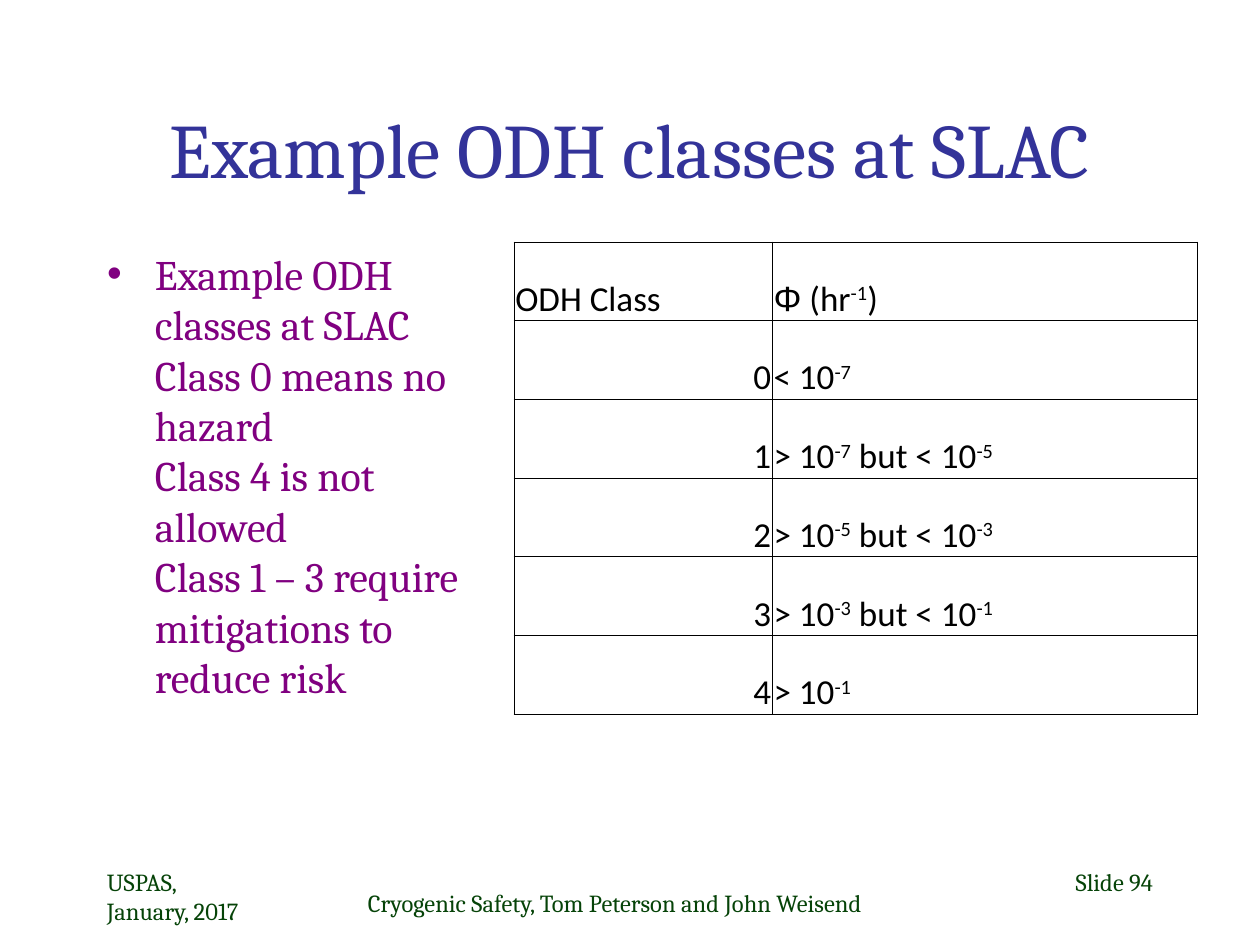
from dataclasses import dataclass

from lxml.etree import SubElement
from pptx import Presentation
from pptx.dml.color import RGBColor
from pptx.enum.text import MSO_ANCHOR, MSO_AUTO_SIZE, PP_ALIGN
from pptx.oxml.ns import qn
from pptx.util import Inches, Pt


def color(value):
    return RGBColor.from_string(value)


@dataclass
class Run:
    text: str
    font: str = "Calibri"
    raised: bool = False


def power(sign, exponent):
    return [Run(f"{sign} 10"), Run(exponent, raised=True)]


def between(low, high):
    return power(">", low) + power(" but <", high)


class SlideBuilder:
    font = "Cambria"
    title_color = "333399"
    body_color = "800080"
    footer_color = "064308"
    table_color = "000000"

    def __init__(self, slide):
        self.slide = slide

    def place(self, shape, left, top, width, height):
        shape.left, shape.top = Inches(left), Inches(top)
        shape.width, shape.height = Inches(width), Inches(height)

    def style(self, paragraph, size, value, alignment=PP_ALIGN.LEFT, name=font):
        paragraph.alignment = alignment
        paragraph.font.size = Pt(size)
        paragraph.font.color.rgb = color(value)
        if name:
            paragraph.font.name = name

    def title(self, text, *bounds):
        shape = self.slide.shapes.title
        self.place(shape, *bounds)
        frame = shape.text_frame
        frame.text = text
        frame.auto_size = MSO_AUTO_SIZE.NONE
        frame.vertical_anchor = MSO_ANCHOR.MIDDLE
        self.style(frame.paragraphs[0], 44, self.title_color, PP_ALIGN.CENTER)

    def body(self, lines, *bounds):
        shape = self.slide.placeholders[1]
        self.place(shape, *bounds)
        frame = shape.text_frame
        frame.auto_size = MSO_AUTO_SIZE.NONE
        paragraph = frame.paragraphs[0]
        paragraph.text = "\v".join(lines)
        paragraph.space_before = Pt(0)
        properties = paragraph._p.get_or_add_pPr()
        properties.set("marL", str(Inches(0.38)))
        properties.set("indent", str(Inches(-0.38)))
        SubElement(properties, qn("a:buFont")).set("typeface", "Arial")
        SubElement(properties, qn("a:buChar")).set("char", "•")
        self.style(paragraph, 24, self.body_color)

    def footer(self, text, alignment, left, top, width, height):
        shape = self.slide.shapes.add_textbox(
            Inches(left), Inches(top), Inches(width), Inches(height))
        frame = shape.text_frame
        frame.word_wrap = True
        paragraph = frame.paragraphs[0]
        paragraph.text = text
        self.style(paragraph, 14, self.footer_color, alignment)

    def border(self, cell):
        properties = cell._tc.get_or_add_tcPr()
        for side in ("a:lnL", "a:lnR", "a:lnT", "a:lnB"):
            line = SubElement(properties, qn(side), w=str(Pt(0.5)))
            fill = SubElement(line, qn("a:solidFill"))
            SubElement(fill, qn("a:srgbClr"), val=self.table_color)

    def cell(self, cell, runs, alignment):
        cell.margin_left = cell.margin_right = cell.margin_top = Inches(0.01)
        cell.margin_bottom = 0
        cell.vertical_anchor = MSO_ANCHOR.BOTTOM
        self.border(cell)
        cell.fill.background()
        paragraph = cell.text_frame.paragraphs[0]
        self.style(paragraph, 20, self.table_color, alignment, None)
        for item in runs:
            run = paragraph.add_run()
            run.text = item.text
            run.font.name = item.font
            if item.raised:
                run._r.get_or_add_rPr().set("baseline", "30000")

    def table(self, rows, widths, left, top, height):
        frame = self.slide.shapes.add_table(
            len(rows), len(widths), Inches(left), Inches(top),
            Inches(sum(widths)), Inches(height))
        table = frame.table
        table.first_row = table.horz_banding = False
        for column, width in zip(table.columns, widths):
            column.width = Inches(width)
        for row_index, row in enumerate(rows):
            for column_index, runs in enumerate(row):
                numeric = row_index > 0 and column_index == 0
                alignment = PP_ALIGN.RIGHT if numeric else PP_ALIGN.LEFT
                self.cell(table.cell(row_index, column_index), runs, alignment)


def main():
    presentation = Presentation()
    presentation.slide_width, presentation.slide_height = Inches(10), Inches(7.5)
    builder = SlideBuilder(
        presentation.slides.add_slide(presentation.slide_layouts[1]))

    builder.title("Example ODH classes at SLAC", 0.75, 0.67, 8.5, 1)
    builder.body([
        "Example ODH classes at SLAC",
        "Class 0 means no hazard",
        "Class 4 is not allowed",
        "Class 1 – 3 require mitigations to reduce risk",
    ], 0.75, 1.92, 3.25, 4.75)

    builder.footer("USPAS,\vJanuary, 2017", PP_ALIGN.LEFT, 0.75, 6.83, 1.75, 0.5)
    builder.footer("Cryogenic Safety, Tom Peterson and John Weisend",
                   PP_ALIGN.CENTER, 2.67, 7, 4.42, 0.33)
    builder.footer("Slide 94", PP_ALIGN.RIGHT, 7.17, 6.83, 2.08, 0.5)

    header = [
        [Run("ODH Class")],
        [Run("Φ", "Arial"), Run(" (hr"), Run("-1", raised=True), Run(")")],
    ]
    rates = [
        power("<", "-7"),
        between("-7", "-5"),
        between("-5", "-3"),
        between("-3", "-1"),
        power(">", "-1"),
    ]
    classes = [[[Run(str(number))], rate] for number, rate in enumerate(rates)]
    builder.table([header] + classes, [2.05, 3.37], 4.08, 1.92, 3.75)

    presentation.save("out.pptx")


if __name__ == "__main__":
    main()
